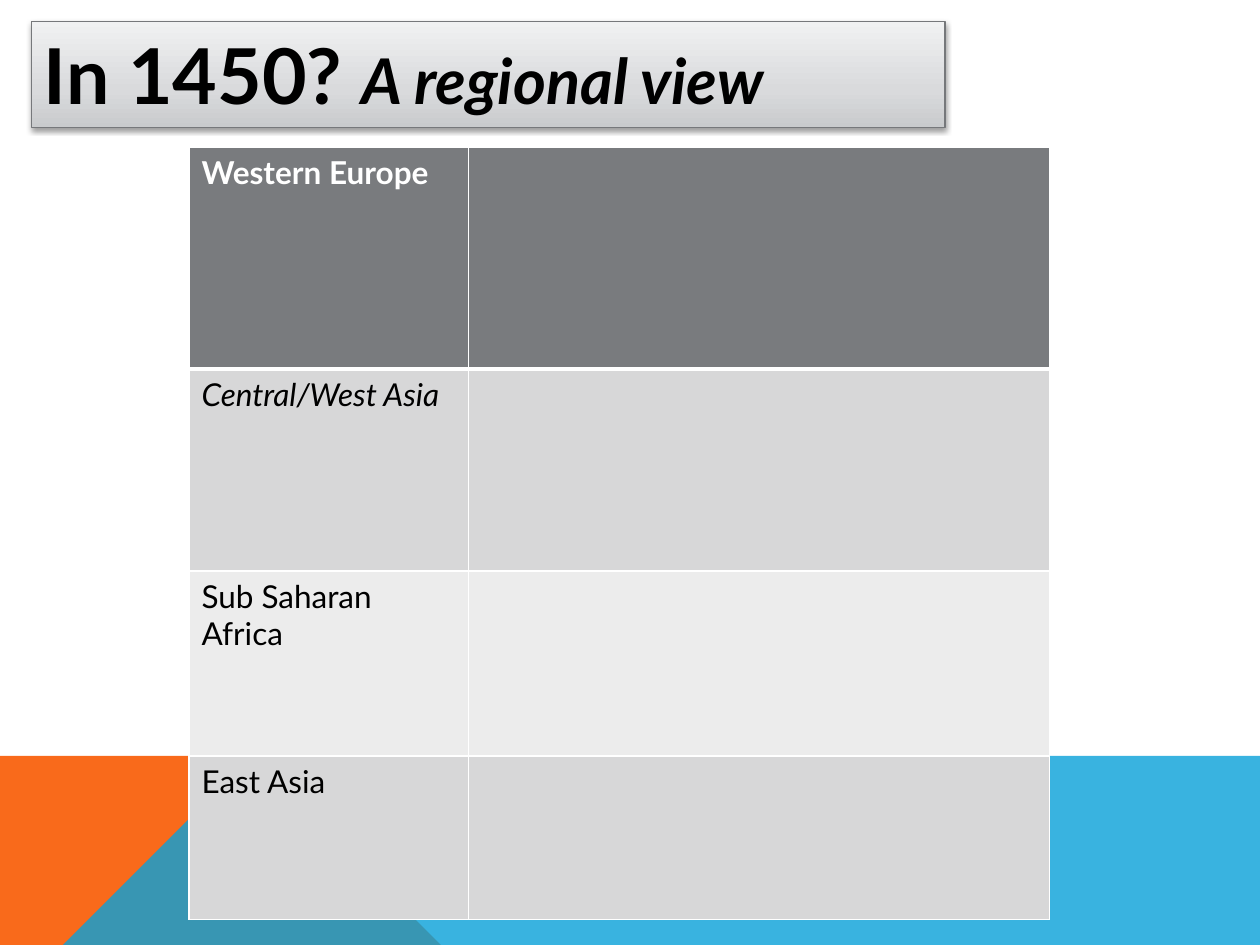
from lxml.etree import SubElement
from pptx import Presentation
from pptx.dml.color import RGBColor
from pptx.enum.shapes import MSO_SHAPE
from pptx.enum.text import MSO_ANCHOR, MSO_AUTO_SIZE, PP_ALIGN
from pptx.oxml.ns import qn
from pptx.util import Inches, Pt

WHITE = RGBColor(0xFF, 0xFF, 0xFF)
BLACK = RGBColor(0x00, 0x00, 0x00)
ORANGE = RGBColor(0xF9, 0x6A, 0x1B)
BLUE = RGBColor(0x08, 0xA1, 0xD9)
HEADER_GRAY = RGBColor(0x79, 0x7B, 0x7E)
BAND_DARK = RGBColor(0xD7, 0xD7, 0xD8)
BAND_LIGHT = RGBColor(0xEC, 0xEC, 0xEC)
TITLE_EDGE = RGBColor(0x76, 0x78, 0x7B)
TITLE_STOPS = [
    (0, RGBColor(0xC9, 0xCB, 0xCD)),
    (35, RGBColor(0xD9, 0xDA, 0xDC)),
    (100, RGBColor(0xF0, 0xF1, 0xF2)),
]


def add_color(parent, color, alpha=None):
    """Append an RGB colour, with optional opacity in percent."""
    node = SubElement(parent, qn("a:srgbClr"), val=str(color))
    if alpha is not None:
        SubElement(node, qn("a:alpha"), val=str(alpha * 1000))


class SlideBuilder:
    font = "Lato"

    def __init__(self, slide):
        self.slide = slide
        self.shapes = slide.shapes

    def run(self, paragraph, text, size, color, bold=False, italic=False):
        run = paragraph.add_run()
        run.text = text
        font = run.font
        font.name, font.size = self.font, Pt(size)
        font.bold, font.italic = bold, italic
        font.color.rgb = color

    def polygon(self, points, color, alpha=None):
        start, *rest = points
        builder = self.shapes.build_freeform(*start, scale=Inches(1))
        builder.add_line_segments(rest, close=True)
        polygon = builder.convert_to_shape()
        polygon.shadow.inherit = False
        polygon.line.fill.background()
        polygon.fill.solid()
        polygon.fill.fore_color.rgb = color
        if alpha is not None:
            rgb = polygon._element.spPr.find(qn("a:solidFill")).find(qn("a:srgbClr"))
            SubElement(rgb, qn("a:alpha"), val=str(alpha * 1000))

    def title(self, left, top, width, height, parts):
        box = self.shapes.add_shape(
            MSO_SHAPE.RECTANGLE, Inches(left), Inches(top), Inches(width), Inches(height))
        box.line.color.rgb = TITLE_EDGE
        box.line.width = Pt(0.75)
        self.gradient(box, TITLE_STOPS)
        self.drop_shadow(box)
        frame = box.text_frame
        frame.word_wrap = True
        frame.auto_size = MSO_AUTO_SIZE.SHAPE_TO_FIT_TEXT
        frame.vertical_anchor = MSO_ANCHOR.TOP
        paragraph = frame.paragraphs[0]
        paragraph.alignment = PP_ALIGN.LEFT
        for text, size, italic in parts:
            self.run(paragraph, text, size, BLACK, bold=True, italic=italic)

    def gradient(self, box, stops):
        """Fill from bottom to top."""
        box.fill.gradient()
        box.fill.gradient_angle = 90
        stop_list = box._element.spPr.find(qn("a:gradFill")).find(qn("a:gsLst"))
        for old_stop in list(stop_list):
            stop_list.remove(old_stop)
        for position, color in stops:
            add_color(SubElement(stop_list, qn("a:gs"), pos=str(position * 1000)), color)

    def drop_shadow(self, box):
        box.shadow.inherit = False
        effects = box._element.spPr.find(qn("a:effectLst"))
        shadow = SubElement(
            effects, qn("a:outerShdw"), blurRad=str(Pt(3.1)), dist=str(Pt(1.6)),
            dir="5400000", rotWithShape="0")
        add_color(shadow, BLACK, 38)

    def cell_borders(self, cell, top, bottom):
        properties = cell._tc.get_or_add_tcPr()
        for side, width in (("L", 1), ("R", 1), ("T", top), ("B", bottom)):
            border = SubElement(properties, qn(f"a:ln{side}"), w=str(Pt(width)))
            add_color(SubElement(border, qn("a:solidFill")), WHITE)

    def region_table(self, left, top, widths, heights, regions):
        """Region names on the left, room for notes on the right."""
        table = self.shapes.add_table(
            len(heights), len(widths), Inches(left), Inches(top),
            Inches(sum(widths)), Inches(sum(heights))).table
        for column, width in zip(table.columns, widths):
            column.width = Inches(width)
        for index, (height, (region, italic)) in enumerate(zip(heights, regions)):
            table.rows[index].height = Inches(height)
            header = index == 0
            band = HEADER_GRAY if header else (BAND_LIGHT, BAND_DARK)[index % 2]
            for cell in table.rows[index].cells:
                self.cell_borders(cell, 3 if index == 1 else 1, 3 if header else 1)
                cell.fill.solid()
                cell.fill.fore_color.rgb = band
            self.run(table.cell(index, 0).text_frame.paragraphs[0], region, 18,
                     WHITE if header else BLACK, bold=header, italic=italic)


def main():
    presentation = Presentation()
    presentation.slide_width, presentation.slide_height = Inches(10), Inches(7.5)
    builder = SlideBuilder(presentation.slides.add_slide(presentation.slide_layouts[6]))

    builder.polygon([(0, 7.5), (0, 5.52), (2.23, 5.52), (3.91, 7.5)], ORANGE)
    builder.polygon([(0, 7.5), (2.23, 5.52), (10, 5.53), (10, 7.5)], BLUE, alpha=80)
    builder.region_table(
        1.5, 1.17, widths=[2.22, 4.61], heights=[1.76, 1.6, 1.47, 1.3],
        regions=[("Western Europe", False), ("Central/West Asia", True),
                 ("Sub Saharan Africa", False), ("East Asia", False)])
    builder.title(0.25, 0.17, 7.25, 0.84,
                  [("In 1450? ", 44, False), ("A regional view", 36, True)])

    presentation.save("out.pptx")


if __name__ == "__main__":
    main()
